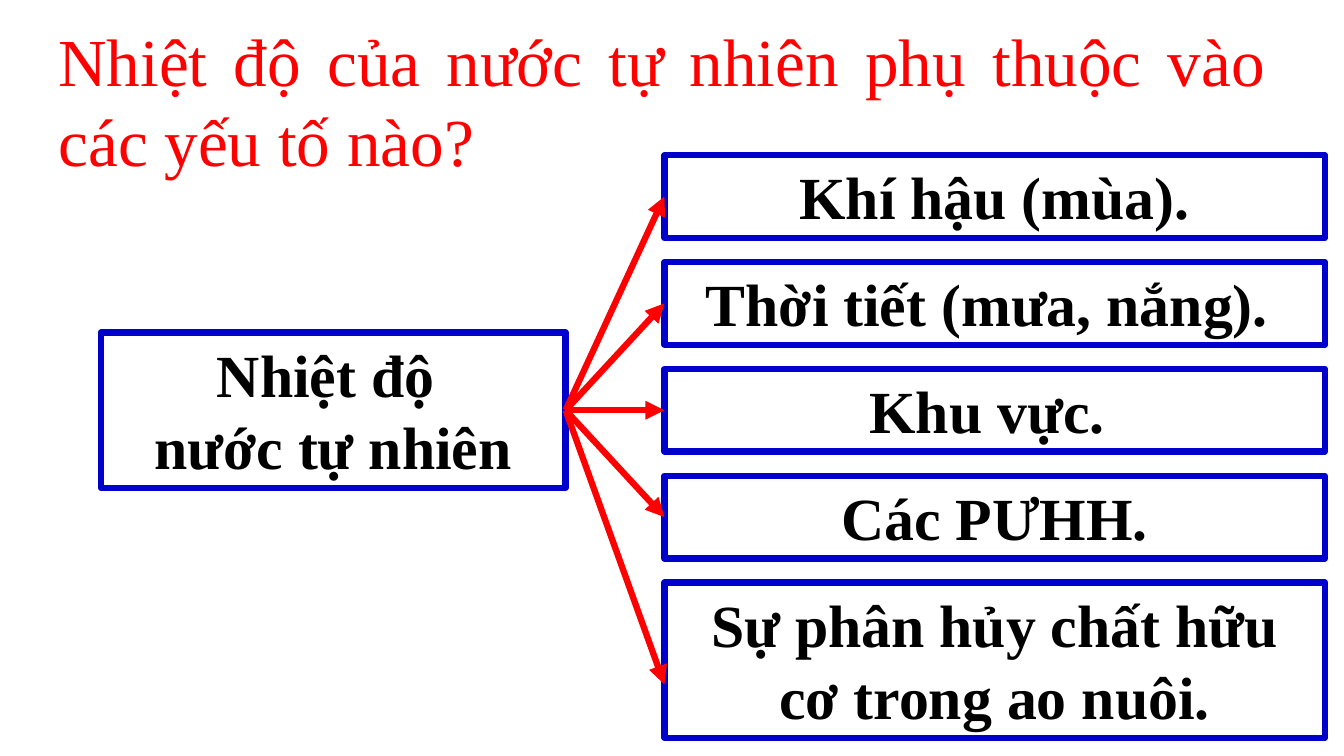
from dataclasses import dataclass

from lxml.etree import SubElement
from pptx import Presentation
from pptx.dml.color import RGBColor
from pptx.enum.shapes import MSO_CONNECTOR, MSO_SHAPE
from pptx.enum.text import MSO_ANCHOR, MSO_AUTO_SIZE, PP_ALIGN
from pptx.oxml.ns import qn
from pptx.util import Inches, Pt


@dataclass(frozen=True)
class Theme:
    """Colours, font and sizes of the slide."""
    font: str = "Times New Roman"
    red: RGBColor = RGBColor(0xFF, 0x00, 0x00)
    blue: RGBColor = RGBColor(0x00, 0x00, 0xCC)
    black: RGBColor = RGBColor(0x00, 0x00, 0x00)
    title_size: float = 48
    box_size: float = 42.7
    line_width: float = 4.5


THEME = Theme()
FACTORS = [
    "Khí hậu (mùa).",
    "Thời tiết (mưa, nắng). ",
    "Khu vực. ",
    "Các PƯHH.",
    "Sự phân hủy chất hữu cơ trong ao nuôi.",
]


def format_text(tf, size, color, align, bold):
    """Format every paragraph and run of a text frame."""
    tf.word_wrap = True
    for p in tf.paragraphs:
        p.alignment = align
        for r in p.runs:
            r.font.name = THEME.font
            r.font.size = Pt(size)
            r.font.bold = bold
            r.font.color.rgb = color


def add_title(s, text, x, y, w, h):
    """Place the question in the title placeholder."""
    sp = s.shapes.title
    sp.left, sp.top, sp.width, sp.height = map(Inches, (x, y, w, h))
    tf = sp.text_frame
    tf.text = text
    tf.auto_size = MSO_AUTO_SIZE.NONE
    tf.vertical_anchor = MSO_ANCHOR.TOP
    format_text(tf, THEME.title_size, THEME.red, PP_ALIGN.JUSTIFY, False)


def add_box(s, text, x, y, w, h):
    """Add an outlined box with bold centred text."""
    sp = s.shapes.add_shape(MSO_SHAPE.RECTANGLE, *map(Inches, (x, y, w, h)))
    sp.shadow.inherit = False
    sp.fill.background()
    sp.line.color.rgb = THEME.blue
    sp.line.width = Pt(THEME.line_width)
    tf = sp.text_frame
    tf.text = text
    tf.vertical_anchor = MSO_ANCHOR.TOP
    format_text(tf, THEME.box_size, THEME.black, PP_ALIGN.CENTER, True)
    return sp


def add_arrow(s, source, target, end_y=None):
    """Draw an arrow to the target's left side, at its middle unless end_y is given."""
    start_y = source.top + source.height // 2
    arrow = s.shapes.add_connector(
        MSO_CONNECTOR.STRAIGHT, source.left + source.width, start_y,
        target.left, start_y if end_y is None else Inches(end_y))
    arrow.begin_connect(source, 3)
    if end_y is None:
        arrow.end_connect(target, 1)
    arrow.line.color.rgb = THEME.red
    arrow.line.width = Pt(THEME.line_width)
    SubElement(arrow.line._get_or_add_ln(), qn("a:tailEnd"), type="triangle")
    SubElement(arrow._element.spPr, qn("a:effectLst"))


def add_factors(s, source, x, y, w):
    """Stack the factor boxes and point an arrow at each."""
    pitch, short, tall = 1.06, 0.82, 1.54
    last = len(FACTORS) - 1
    for i, text in enumerate(FACTORS):
        top = y + i * pitch
        box = add_box(s, text, x, top, w, tall if i == last else short)
        add_arrow(s, source, box, top + 1.01 if i == last else None)


def main():
    """Build and save the slide."""
    prs = Presentation()
    prs.slide_width, prs.slide_height = Inches(13.33), Inches(7.5)
    s = prs.slides.add_slide(prs.slide_layouts[5])
    add_title(s, "Nhiệt độ của nước tự nhiên phụ thuộc vào các yếu tố nào?",
              0.48, 0.14, 12.18, 1.72)
    topic = add_box(s, "Nhiệt độ \nnước tự nhiên", 1, 3.3, 4.61, 1.54)
    add_factors(s, topic, 6.59, 1.54, 6.55)
    prs.save("out.pptx")


if __name__ == "__main__":
    main()
